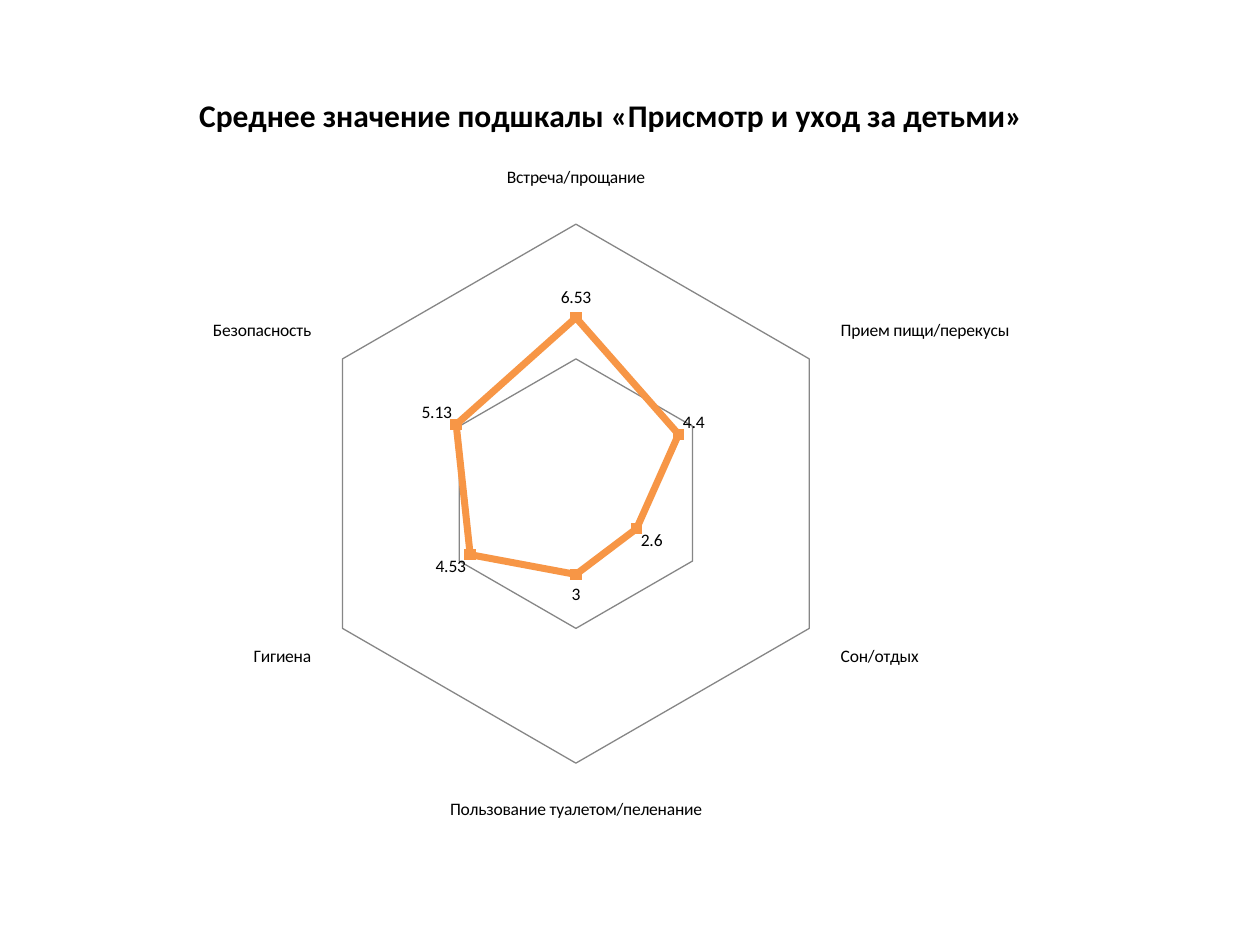
"""Build a slide with a radar chart of the child care subscale means."""
from pptx import Presentation
from pptx.chart.data import CategoryChartData
from pptx.dml.color import RGBColor
from pptx.enum.chart import XL_CHART_TYPE, XL_MARKER_STYLE, XL_TICK_LABEL_POSITION, XL_TICK_MARK
from pptx.oxml import parse_xml
from pptx.oxml.ns import nsdecls
from pptx.util import Inches, Pt

COLORS = {name: RGBColor.from_string(code) for name, code in {
    "text": "000000", "grid": "868686", "line": "F79646"}.items()}
MEANS = {
    "Встреча/прощание": 6.53,
    "Прием пищи/перекусы": 4.4,
    "Сон/отдых": 2.6,
    "Пользование туалетом/пеленание": 3,
    "Гигиена": 4.53,
    "Безопасность": 5.13,
}
PLOT = {"x": 0.24, "y": 0.2, "w": 0.46, "h": 0.7}


def style(font, size, bold=False):
    font.name = "Calibri"
    font.size = Pt(size)
    font.bold = bold
    font.color.rgb = COLORS["text"]


deck = Presentation()
deck.slide_width, deck.slide_height = Inches(10), Inches(7.5)
slide = deck.slides.add_slide(deck.slide_layouts[6])

data = CategoryChartData()
data.categories = list(MEANS)
data.add_series("Series 1", list(MEANS.values()))
chart = slide.shapes.add_chart(
    XL_CHART_TYPE.RADAR_MARKERS, Inches(0.2), Inches(0.52),
    Inches(9.3), Inches(6.18), data).chart
style(chart.font, 10)
chart.has_legend = False

chart.has_title = True
title = chart.chart_title.text_frame
title.text = "Среднее значение подшкалы «Присмотр и уход за детьми»"
style(title.paragraphs[0].runs[0].font, 18, True)
chart.chart_title.include_in_layout = False

scale = chart.value_axis
scale.minimum_scale, scale.maximum_scale, scale.major_unit = 0, 10, 5
scale.has_major_gridlines = True
grid = scale.major_gridlines.format.line
grid.color.rgb = COLORS["grid"]
grid.width = Pt(0.75)
scale.tick_label_position = XL_TICK_LABEL_POSITION.NONE
scale.visible = False

names = chart.category_axis
names.has_major_gridlines = True
names.major_tick_mark = XL_TICK_MARK.NONE
names.format.line.fill.background()

series = chart.plots[0].series[0]
series.smooth = False
series.format.line.color.rgb = COLORS["line"]
series.format.line.width = Pt(4)
mark = series.marker
mark.style = XL_MARKER_STYLE.SQUARE
mark.size = 6
mark.format.fill.solid()
mark.format.fill.fore_color.rgb = COLORS["line"]
mark.format.line.color.rgb = COLORS["line"]

labels = series.data_labels
labels.show_value = True
labels.number_format = "General"
labels.number_format_is_linked = False
style(labels.font, 10)

area = chart.plots[0]._element.getparent()
for old in area.findall("{*}layout"):
    area.remove(old)
modes = '<c:layoutTarget val="inner"/><c:xMode val="edge"/><c:yMode val="edge"/>'
sides = "".join(f'<c:{side} val="{part}"/>' for side, part in PLOT.items())
area.insert(0, parse_xml(
    f'<c:layout {nsdecls("c")}><c:manualLayout>{modes}{sides}</c:manualLayout></c:layout>'))

deck.save("out.pptx")
